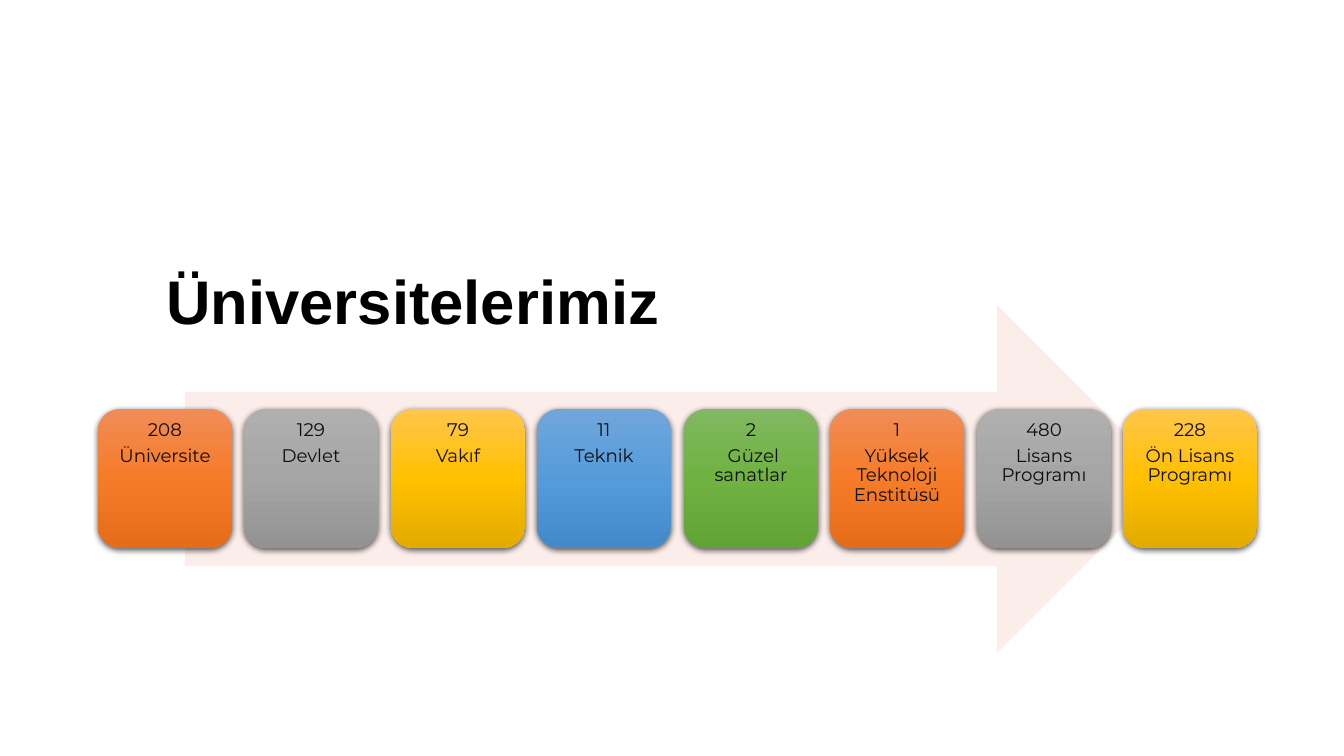
from lxml import etree
from pptx import Presentation
from pptx.dml.color import RGBColor
from pptx.enum import shapes, text
from pptx.oxml.ns import qn
from pptx.util import Pt

PX = 9071  # EMU in one px

COLORS = {
    "title": "000000",
    "text": "0D0D0D",
    "arrow": "F8D7CE",
    "shadow": "000000",
}
FADES = {
    "orange": ("F18C57", "F67B28", "E56C19"),
    "gray": ("AFAFAF", "A5A5A5", "939393"),
    "gold": ("FFC64B", "FFC000", "E3AB00"),
    "blue": ("71A6DB", "559BDB", "448ACA"),
    "green": ("81B861", "6FB242", "62A336"),
}
CARDS = [
    ("208", "Üniversite", "orange"),
    ("129", "Devlet", "gray"),
    ("79", "Vakıf", "gold"),
    ("11", "Teknik", "blue"),
    ("2", " Güzel sanatlar", "green"),
    ("1", "Yüksek Teknoloji Enstitüsü", "orange"),
    ("480", "Lisans Programı", "gray"),
    ("228", "Ön Lisans Programı", "gold"),
]
FIRST, LAST = 98, 1123  # left edges of the outer cards


def scale(*px):
    return [n * PX for n in px]


def child(parent, tag, **attrs):
    return etree.SubElement(parent, qn(tag), {k: str(v) for k, v in attrs.items()})


def style(para, size, font, color):
    para.alignment = text.PP_ALIGN.CENTER
    para.line_spacing = 0.9
    for run in para.runs:
        run.font.size = Pt(size)
        run.font.name = font
        run.font.color.rgb = RGBColor.from_string(COLORS[color])


def add_shape(slide, kind, box):
    shape = slide.shapes.add_shape(kind, *scale(*box))
    shape.shadow.inherit = False
    shape.line.fill.background()
    return shape


def add_title(slide, words, box):
    title = slide.shapes.title
    title.left, title.top, title.width, title.height = scale(*box)
    frame = title.text_frame
    frame.text = words
    frame.vertical_anchor = text.MSO_ANCHOR.MIDDLE
    style(frame.paragraphs[0], 44, "Arial", "title")
    frame.paragraphs[0].runs[0].font.bold = True


def add_arrow(slide, box):
    arrow = add_shape(slide, shapes.MSO_SHAPE.RIGHT_ARROW, box)
    arrow.fill.solid()
    arrow.fill.fore_color.rgb = RGBColor.from_string(COLORS["arrow"])
    color = arrow.fill._xPr.find(".//" + qn("a:srgbClr"))
    child(color, "a:alpha", val=44000)


def set_fade(shape, hues):
    """Fill with three evenly spaced stops from top to bottom."""
    shape.fill.gradient()
    shape.fill.gradient_angle = 270
    stops = shape._element.spPr.find(".//" + qn("a:gsLst"))
    for old in list(stops):
        stops.remove(old)
    for i, hue in enumerate(hues):
        stop = child(stops, "a:gs", pos=i * 50000)
        child(stop, "a:srgbClr", val=hue)


def set_shadow(shape):
    effects = shape._element.spPr.find(qn("a:effectLst"))
    outer = child(effects, "a:outerShdw", blurRad=Pt(4.5), dist=Pt(1.5),
                  dir=5400000, algn="ctr", rotWithShape=0)
    color = child(outer, "a:srgbClr", val=COLORS["shadow"])
    child(color, "a:alpha", val=63000)


def add_card(slide, box, count, label, fade):
    card = add_shape(slide, shapes.MSO_SHAPE.ROUNDED_RECTANGLE, box)
    set_fade(card, FADES[fade])
    set_shadow(card)
    frame = card.text_frame
    frame.word_wrap = True
    frame.vertical_anchor = text.MSO_ANCHOR.TOP
    frame.margin_left = frame.margin_right = 5 * PX
    frame.margin_top = frame.margin_bottom = 5 * PX
    frame.text = f"{count}\n{label}"
    for para in frame.paragraphs:
        style(para, 13, "Montserrat", "text")
        para.space_after = Pt(4.5)


def main():
    deck = Presentation()
    deck.slide_width, deck.slide_height = scale(1344, 756)
    slide = deck.slides.add_slide(deck.slide_layouts[5])
    add_title(slide, "Üniversitelerimiz", (16, 232, 794, 146))
    add_arrow(slide, (185, 305, 986, 348))
    for i, card in enumerate(CARDS):
        left = FIRST + round(i * (LAST - FIRST) / (len(CARDS) - 1))
        add_card(slide, (left, 409, 134, 139), *card)
    deck.save("out.pptx")


if __name__ == "__main__":
    main()
